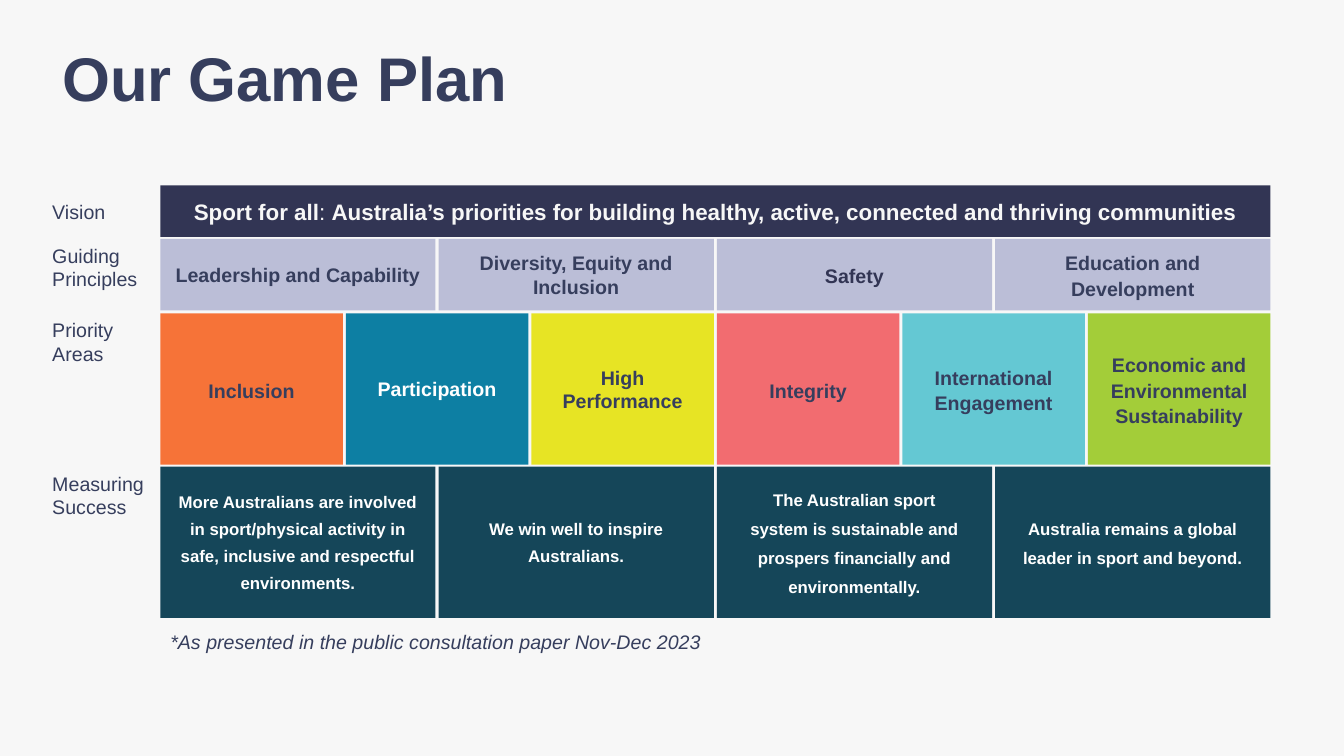
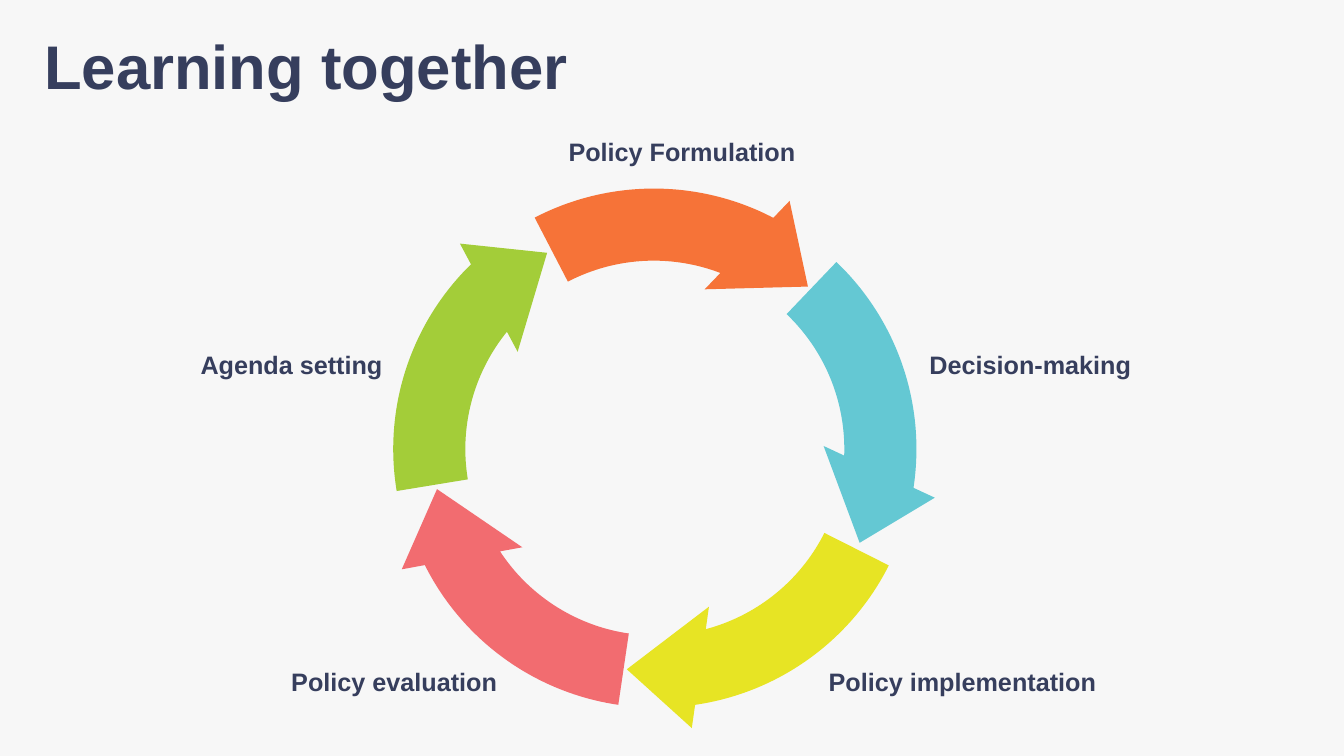
from pptx import Presentation
from pptx.dml.color import RGBColor
from pptx.enum.shapes import MSO_SHAPE
from pptx.enum.text import MSO_ANCHOR, PP_ALIGN
from pptx.util import Emu, Pt

RECTANGLE, CIRCULAR_ARROW = MSO_SHAPE.RECTANGLE, MSO_SHAPE.CIRCULAR_ARROW
LEFT, CENTER = PP_ALIGN.LEFT, PP_ALIGN.CENTER
TOP, MIDDLE = MSO_ANCHOR.TOP, MSO_ANCHOR.MIDDLE

PX = 9144  # EMU in one px, at 100 px to the inch
PAGE_WIDTH, PAGE_HEIGHT = 1333, 750
FONT = "Arial"
COLORS = {
    "paper": "F7F7F7", "white": "FFFFFF", "ink": "363E5D", "navy": "323554",
    "lavender": "BBBED7", "petrol": "154659", "orange": "F67338",
    "blue": "0D7FA3", "yellow": "E7E424", "coral": "F26C70",
    "aqua": "64C8D3", "green": "A3CD39",
}

# Game plan grid
GRID_LEFT, GRID_WIDTH, GAP = 159, 1101, 3
LABEL_LEFT, LABEL_WIDTH = 42, 123
VISION = [[
    ("Sport for all", True),
    (": ", False),
    ("Australia’s priorities for building healthy, active, connected "
     "and thriving communities", True),
]]
# Each cell: paragraphs, fill, text colour, line spacing
PRINCIPLES = [
    (["Leadership and Capability"], "lavender", "ink", 1.0),
    (["Diversity, Equity and Inclusion"], "lavender", "ink", 1.0),
    (["Safety"], "lavender", "navy", 1.1),
    (["Education and Development"], "lavender", "ink", 1.1),
]
PRIORITIES = [
    (["Inclusion"], "orange", "ink", 1.1),
    (["Participation"], "blue", "white", 1.0),
    (["High Performance"], "yellow", "ink", 1.0),
    (["Integrity"], "coral", "ink", 1.1),
    (["International Engagement"], "aqua", "ink", 1.1),
    (["Economic and Environmental Sustainability"], "green", "ink", 1.1),
]
MEASURES = [
    (["More Australians are involved", "in sport/physical activity in",
      "safe, inclusive and respectful", "environments."], "petrol", "white", 1.0),
    (["We win well to inspire", "Australians."], "petrol", "white", 1.0),
    (["The Australian sport", "system is sustainable and",
      "prospers financially and", "environmentally."], "petrol", "white", 1.1),
    (["Australia remains a global", "leader in sport and beyond."],
     "petrol", "white", 1.1),
]
# Each row: label, label top, top, height, text size, space after, cells
ROWS = [
    ("Vision", 193, 184, 51, 16, 0, [(VISION, "navy", "paper", 1.0)]),
    ("Guiding Principles", 237, 237, 71, 14, 5, PRINCIPLES),
    ("Priority Areas", 311, 311, 150, 14, 5, PRIORITIES),
    ("Measuring Success", 463, 463, 150, 12, 5, MEASURES),
]

# Policy cycle
ARROW_SIZE = 563
ARROW_ADJUSTMENTS = (0.127, 11.423, 204.899, 173.559, 0.108)
LABEL_SIZE = (308, 40)
# Each stage: label, label left and top, fill, arrow left and top, rotation
STAGES = [
    ("Decision-making", 912, 342, "aqua", 371, 164, 24.4),
    ("Policy implementation", 812, 656, "yellow", 371, 164, 97.5),
    ("Policy evaluation", 279, 656, "coral", 369, 164, 169.1),
    ("Agenda setting", 189, 342, "green", 365, 164, 241.4),
    ("Policy Formulation", 554, 130, "orange", 367, 162, 313.3),
]


def rgb(name):
    return RGBColor.from_string(COLORS[name])


def scaled(box):
    return [Emu(round(length * PX)) for length in box]


def write(shape, paragraphs, size, color="ink", bold=False, italic=False,
          align=LEFT, anchor=TOP, spacing=1.0, after=0):
    """Fill a shape with paragraphs: strings or lists of (text, bold)."""
    frame = shape.text_frame
    frame.word_wrap = True
    frame.vertical_anchor = anchor
    for index, content in enumerate(paragraphs):
        para = frame.add_paragraph() if index else frame.paragraphs[0]
        layout = {"alignment": align, "line_spacing": spacing,
                  "space_after": Pt(after)}
        for key, value in layout.items():
            setattr(para, key, value)
        spans = [(content, bold)] if isinstance(content, str) else content
        for text, weight in spans:
            span = para.add_run()
            span.text = text
            style = {"name": FONT, "size": Pt(size), "bold": weight,
                     "italic": italic}
            for key, value in style.items():
                setattr(span.font, key, value)
            span.font.color.rgb = rgb(color)


def add_text(page, box, text, size, **style):
    write(page.shapes.add_textbox(*scaled(box)), [text], size, **style)


def add_block(page, kind, box, fill):
    shape = page.shapes.add_shape(kind, *scaled(box))
    shape.shadow.inherit = False
    shape.fill.solid()
    shape.fill.fore_color.rgb = rgb(fill)
    shape.line.fill.background()
    return shape


def add_page(deck, title, title_box):
    page = deck.slides.add_slide(deck.slide_layouts[6])
    page.background.fill.solid()
    page.background.fill.fore_color.rgb = rgb("paper")
    add_text(page, title_box, title, 44, bold=True, anchor=MIDDLE, spacing=0.9)
    return page


def add_row(page, box, cells, size, after):
    """Share the width of the box equally among the cells."""
    left, top, width, height = box
    cell_width = (width - GAP * (len(cells) - 1)) / len(cells)
    for index, (paragraphs, fill, color, spacing) in enumerate(cells):
        cell_left = left + index * (cell_width + GAP)
        cell = add_block(page, RECTANGLE,
                         (cell_left, top, cell_width, height), fill)
        write(cell, paragraphs, size, color, bold=True, align=CENTER,
              anchor=MIDDLE, spacing=spacing, after=after)


def add_game_plan(deck):
    page = add_page(deck, "Our Game Plan", (52, 21, 1233, 120))
    for label, label_top, top, height, size, after, cells in ROWS:
        add_row(page, (GRID_LEFT, top, GRID_WIDTH, height), cells, size, after)
        add_text(page, (LABEL_LEFT, label_top, LABEL_WIDTH, 57), label, 14)
    # Footnote
    add_text(page, (GRID_LEFT, 620, GRID_WIDTH, 34),
             "*As presented in the public consultation paper Nov-Dec 2023",
             14, italic=True)


def add_policy_cycle(deck):
    page = add_page(deck, "Learning together", (34, 14, 1208, 110))
    for label, label_left, label_top, fill, left, top, rotation in STAGES:
        arrow = add_block(page, CIRCULAR_ARROW,
                          (left, top, ARROW_SIZE, ARROW_SIZE), fill)
        arrow.rotation = rotation
        for index, value in enumerate(ARROW_ADJUSTMENTS):
            arrow.adjustments[index] = value
        add_text(page, (label_left, label_top, *LABEL_SIZE), label, 18, bold=True)


def main():
    deck = Presentation()
    deck.slide_width, deck.slide_height = scaled((PAGE_WIDTH, PAGE_HEIGHT))
    add_game_plan(deck)
    add_policy_cycle(deck)
    deck.save("out.pptx")


if __name__ == "__main__":
    main()
